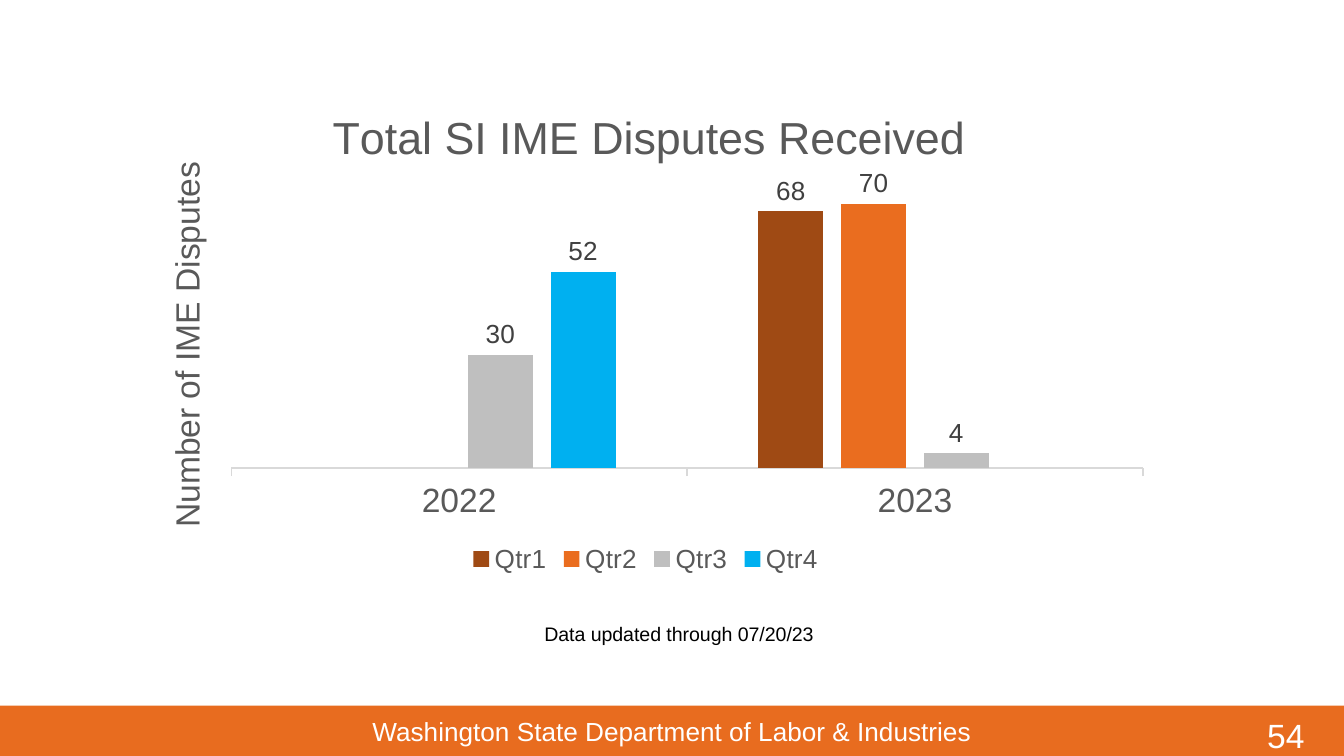
from lxml import etree
from pptx import Presentation
from pptx.chart.data import CategoryChartData
from pptx.dml.color import RGBColor
from pptx.enum import chart as charts, shapes, text
from pptx.oxml.ns import qn
from pptx.util import Pt

COLORS = {
    "bar": "E86C1F", "white": "FFFFFF", "black": "000000",
    "heading": "595959", "label": "404040", "axis": "D9D9D9",
    "Qtr1": "9F4A14", "Qtr2": "EA6D1F", "Qtr3": "BFBFBF", "Qtr4": "00B0F0",
}
YEARS = ["2022", "2023"]
DISPUTES = {"Qtr1": (None, 68), "Qtr2": (None, 70), "Qtr3": (30, 4), "Qtr4": (52, None)}


def color(name):
    return RGBColor.from_string(COLORS[name])


def style(font, size, name):
    font.name = "Arial"
    font.size = Pt(size)
    font.bold = False
    font.color.rgb = color(name)


def set_layout(element, index, **values):
    """Pin a chart part at fractions of the chart area."""
    for old in element.findall(qn("c:layout")):
        element.remove(old)
    layout = etree.Element(qn("c:layout"))
    element.insert(index, layout)
    manual = etree.SubElement(layout, qn("c:manualLayout"))
    for tag, value in values.items():
        etree.SubElement(manual, qn(f"c:{tag}")).set("val", str(value))


def add_label(page, words, box, size, align, anchor):
    label = page.shapes.add_textbox(*map(Pt, box))
    frame = label.text_frame
    frame.word_wrap = True
    frame.vertical_anchor = anchor
    para = frame.paragraphs[0]
    para.text = words
    para.alignment = align
    style(para.font, size, "white")


def add_footer(page, left, top, width, height):
    bar = page.shapes.add_shape(shapes.MSO_SHAPE.RECTANGLE, *map(Pt, (left, top, width, height)))
    bar.shadow.inherit = False
    bar.fill.solid()
    bar.fill.fore_color.rgb = color("bar")
    bar.line.fill.background()
    add_label(page, "54", (left + width - 48.25, top, 42, 31.5), 18,
              text.PP_ALIGN.LEFT, text.MSO_ANCHOR.MIDDLE)
    add_label(page, "Washington State Department of Labor & Industries",
              (left, top + 1.5, width, 18), 14, text.PP_ALIGN.CENTER, text.MSO_ANCHOR.TOP)


def set_heading(title, words, size, x, y):
    para = title.text_frame.paragraphs[0]
    para.text = words
    style(para.font, size, "heading")
    set_layout(title._element, 1, xMode="edge", yMode="edge", x=x, y=y)


def add_disputes_chart(page, left, top, width, height):
    data = CategoryChartData()
    data.categories = YEARS
    for quarter, counts in DISPUTES.items():
        data.add_series(quarter, counts)
    chart = page.shapes.add_chart(charts.XL_CHART_TYPE.COLUMN_CLUSTERED,
                                  *map(Pt, (left, top, width, height)), data).chart
    style(chart.font, 10, "black")
    chart.has_title = True
    set_heading(chart.chart_title, "Total SI IME Disputes Received", 24, 0.19, 0.05)
    chart.has_legend = True
    chart.legend.position = charts.XL_LEGEND_POSITION.BOTTOM
    chart.legend.include_in_layout = False
    style(chart.legend.font, 14, "heading")

    years = chart.category_axis
    years.major_tick_mark = charts.XL_TICK_MARK.OUTSIDE
    years.format.line.color.rgb = color("axis")
    years.format.line.width = Pt(0.75)
    style(years.tick_labels.font, 18, "heading")

    scale = chart.value_axis
    scale.minimum_scale, scale.maximum_scale = 0, 80
    scale.has_major_gridlines = False
    scale.has_title = True
    set_heading(scale.axis_title, "Number of IME Disputes", 18, 0.03, 0.16)
    body = scale.axis_title.text_frame._txBody.find(qn("a:bodyPr"))
    body.set("rot", "-5400000")
    body.set("vert", "horz")
    scale.visible = False

    plot = chart.plots[0]
    plot.gap_width, plot.overlap = 219, -27
    plot.vary_by_categories = False
    for series in plot.series:
        series.format.fill.solid()
        series.format.fill.fore_color.rgb = color(series.name)
        labels = series.data_labels
        labels.show_value = True
        labels.position = charts.XL_LABEL_POSITION.OUTSIDE_END
        style(labels.font, 14, "label")
    set_layout(chart._chartSpace.chart.plotArea, 0, layoutTarget="inner",
               xMode="edge", yMode="edge", x=0.1, y=0.18, w=0.88, h=0.6)


def place_note(holder, left, top, width, height):
    holder.left, holder.top, holder.width, holder.height = map(Pt, (left, top, width, height))
    frame = holder.text_frame
    frame.vertical_anchor = text.MSO_ANCHOR.BOTTOM
    frame.margin_bottom = 0
    para = frame.paragraphs[0]
    para.text = "Data updated through 07/20/23"
    para.space_before = Pt(0)
    props = para._p.get_or_add_pPr()
    props.set("marL", str(Pt(216)))
    props.set("indent", "0")
    etree.SubElement(props, qn("a:buNone"))
    style(para.font, 10.5, "black")


def main():
    deck = Presentation()
    deck.slide_width, deck.slide_height = Pt(720), Pt(405)
    page = deck.slides.add_slide(deck.slide_layouts[1])
    heading = page.shapes.title._element
    heading.getparent().remove(heading)
    add_footer(page, 0, 378, 720, 27)
    add_disputes_chart(page, 68.4, 40.3, 555, 270)
    place_note(page.placeholders[1], 68.4, 316.8, 521.3, 28.8)
    deck.save("out.pptx")


if __name__ == "__main__":
    main()
